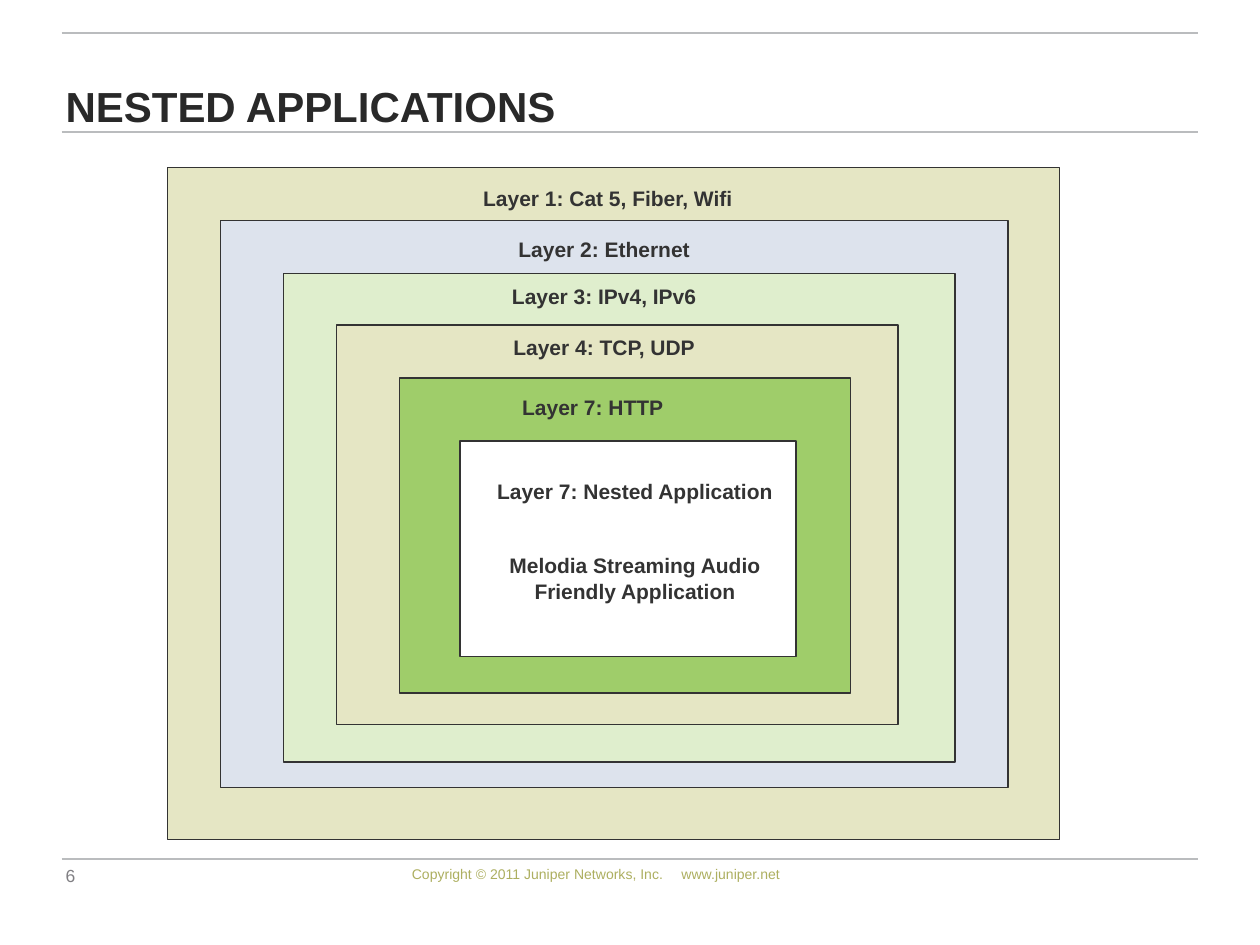
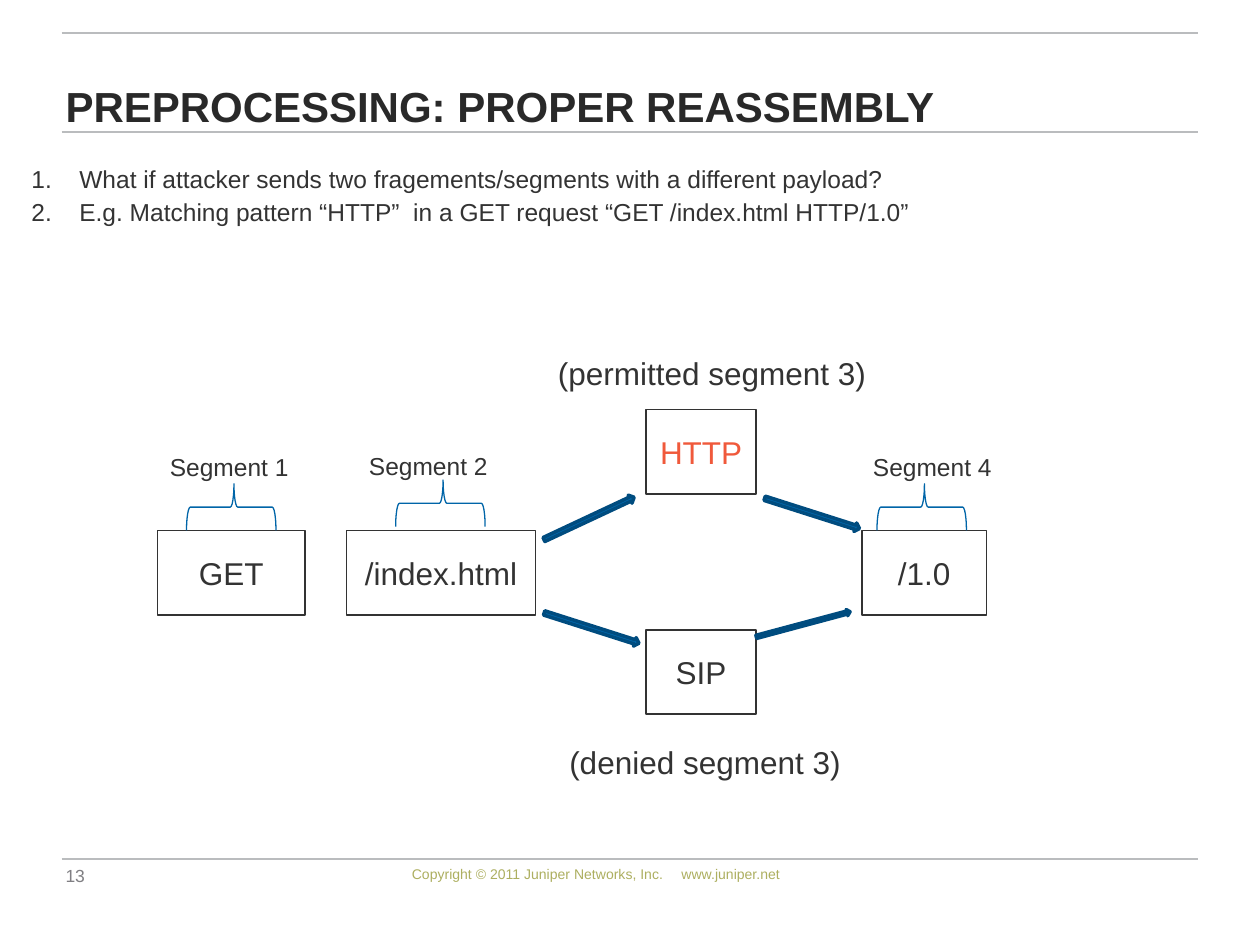
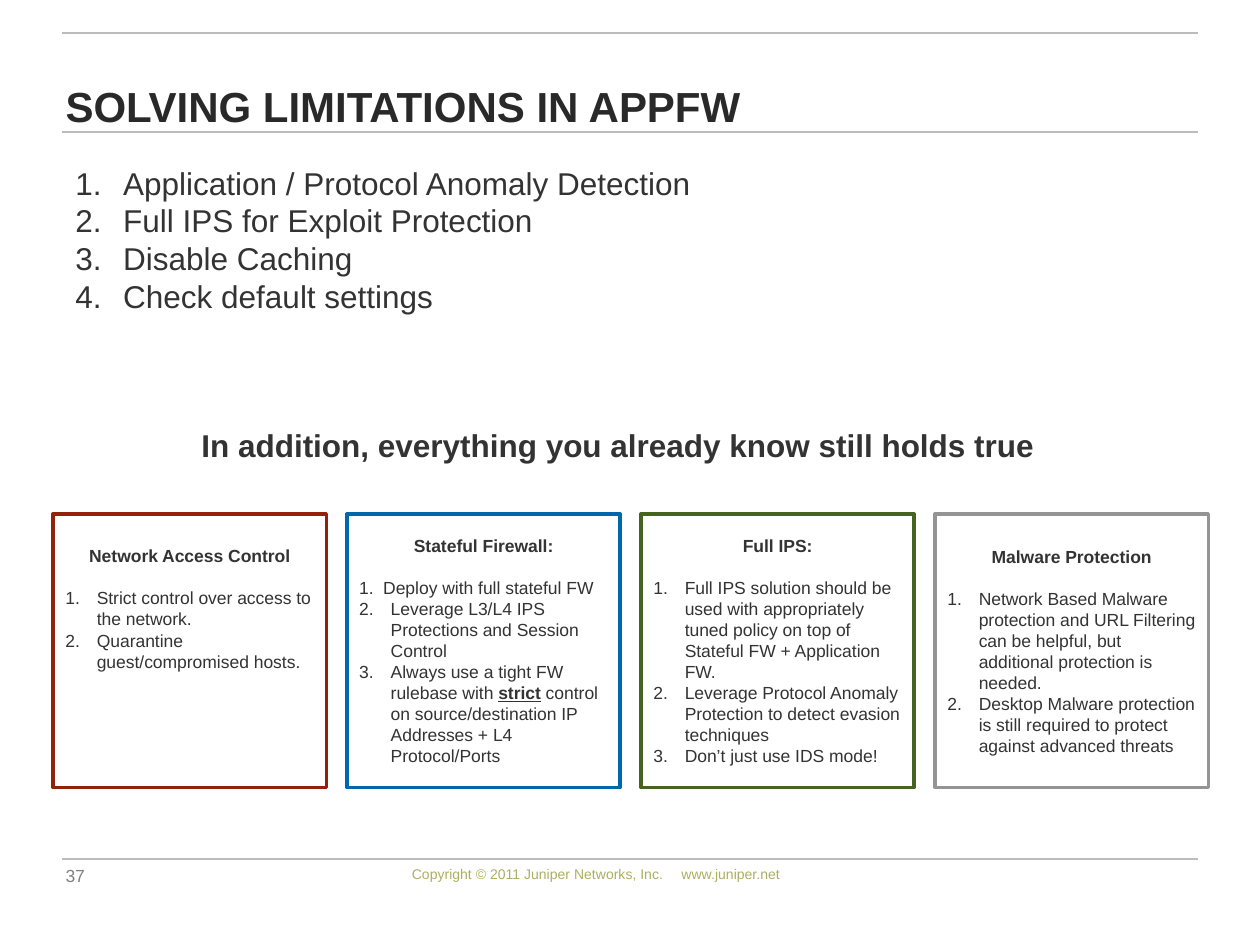
from lxml import etree
from pptx import Presentation
from pptx.dml.color import RGBColor
from pptx.enum.shapes import MSO_CONNECTOR, MSO_SHAPE
from pptx.enum.text import MSO_ANCHOR, PP_ALIGN
from pptx.oxml.ns import qn
from pptx.util import Inches, Pt

INK = RGBColor(0x33, 0x33, 0x33)
TITLE_INK = RGBColor(0x29, 0x29, 0x29)
RULE = RGBColor(0xBA, 0xBC, 0xBE)
PAGE_GREY = RGBColor(0x80, 0x7F, 0x83)
OLIVE = RGBColor(0xAD, 0xAF, 0x60)
WHITE = RGBColor(0xFF, 0xFF, 0xFF)
SAND = RGBColor(0xE5, 0xE6, 0xC4)
MIST = RGBColor(0xDD, 0xE3, 0xED)
MINT = RGBColor(0xDF, 0xEE, 0xCD)
GREEN = RGBColor(0x9F, 0xCD, 0x6A)
ORANGE = RGBColor(0xF0, 0x59, 0x3B)
BRACE_BLUE = RGBColor(0x00, 0x65, 0xA8)
BLUE = RGBColor(0x00, 0x67, 0xAC)
NAVY = RGBColor(0x00, 0x4C, 0x7F)
RED = RGBColor(0x93, 0x22, 0x0B)
FOREST = RGBColor(0x45, 0x64, 0x22)
GREY = RGBColor(0x94, 0x94, 0x94)

FONT = "Arial"
COPYRIGHT = "Copyright © 2011 Juniper Networks, Inc.\twww.juniper.net"
CENTER = {"alignment": PP_ALIGN.CENTER}
PADDING = (0.1, 0.05, 0.1, 0.05)
SIDES = ("margin_left", "margin_top", "margin_right", "margin_bottom")


def assign(target, values):
    """Set each named value on the target."""
    for name, value in values.items():
        setattr(target, name, value)


class Deck:
    """Holds the presentation, its style and the current slide."""

    def __init__(self):
        """Start an empty 10 by 7.5 inch presentation."""
        self.show = Presentation()
        assign(self.show, {"slide_width": Inches(10), "slide_height": Inches(7.5)})
        self.slide = None

    def start(self, title, number):
        """Add a slide with its rules, title and footer."""
        self.slide = self.show.slides.add_slide(self.show.slide_layouts[6])
        self.text((0.52, 6.81, 0.58, 0.22), [number], 10, PAGE_GREY,
                  anchor=MSO_ANCHOR.BOTTOM, padding=(0, 0, 0, 0))
        for height in (6.82, 1.05, 0.26):
            self.rule(height)
        footer = self.text((3.17, 6.82, 3.25, 0.24), [COPYRIGHT], 8, OLIVE)
        stops = etree.SubElement(footer.paragraphs[0]._p.get_or_add_pPr(), qn("a:tabLst"))
        etree.SubElement(stops, qn("a:tab"), pos=str(Inches(2.14)), algn="l")
        self.text((0.52, 0.28, 8.99, 0.81), [title], 24, TITLE_INK, bold=True,
                  layout={"line_spacing": 0.9, "space_after": Pt(5.3)},
                  anchor=MSO_ANCHOR.BOTTOM, padding=(0, 0.05, 0.1, 0.05))

    def rule(self, height):
        """Draw a grey line across the slide."""
        line = self.slide.shapes.add_connector(
            MSO_CONNECTOR.STRAIGHT, Inches(0.49), Inches(height), Inches(9.51), Inches(height))
        line.line.color.rgb = RULE
        line.line.width = Pt(1)
        etree.SubElement(line._element.spPr, qn("a:effectLst"))

    def shape(self, preset, at, fill, edge, weight=1, turn=0):
        """Draw a preset shape."""
        figure = self.slide.shapes.add_shape(preset, *map(Inches, at))
        figure.shadow.inherit = False
        figure.rotation = turn
        if fill is None:
            figure.fill.background()
        else:
            figure.fill.solid()
            figure.fill.fore_color.rgb = fill
        figure.line.color.rgb = edge
        figure.line.width = Pt(weight)
        return figure

    def text(self, at, paragraphs, size, color=INK, anchor=MSO_ANCHOR.TOP, padding=PADDING,
             **options):
        """Add a text box and fill it."""
        frame = self.slide.shapes.add_textbox(*map(Inches, at)).text_frame
        self.fit(frame, anchor, padding)
        self.add_text(frame, paragraphs, size, color, **options)
        return frame

    def box(self, at, paragraphs, size, color=INK, edge=INK, weight=1, padding=PADDING, **options):
        """Draw a white rectangle with text centred in its height."""
        frame = self.shape(MSO_SHAPE.RECTANGLE, at, WHITE, edge, weight).text_frame
        self.fit(frame, MSO_ANCHOR.MIDDLE, padding)
        self.add_text(frame, paragraphs, size, color, **options)
        return frame

    def fit(self, frame, anchor, padding):
        """Set wrapping, anchor and margins."""
        assign(frame, {"word_wrap": True, "vertical_anchor": anchor})
        assign(frame, dict(zip(SIDES, map(Inches, padding))))

    def add_text(self, frame, paragraphs, size, color=INK, bold=False, layout=None,
                 indents=None, after=False):
        """Add paragraphs, numbered when indents are given."""
        for index, content in enumerate(paragraphs):
            reuse = index == 0 and not after
            paragraph = frame.paragraphs[0] if reuse else frame.add_paragraph()
            if indents:
                self.number(paragraph, indents[min(index, len(indents) - 1)])
            assign(paragraph, layout or {"alignment": PP_ALIGN.LEFT})
            for words, accents in [(content, {})] if isinstance(content, str) else content:
                run = paragraph.add_run()
                run.text = words
                assign(run.font, {"name": FONT, "size": Pt(size), "bold": bold, **accents})
                run.font.color.rgb = color

    def number(self, paragraph, indent):
        """Give a paragraph an automatic number and hanging indent."""
        properties = paragraph._p.get_or_add_pPr()
        properties.set("marL", str(Inches(indent)))
        properties.set("indent", str(-Inches(indent)))
        etree.SubElement(properties, qn("a:buFont"), typeface=FONT)
        etree.SubElement(properties, qn("a:buAutoNum"), type="arabicPeriod")


def nested_applications(deck):
    """Build the slide of nested layers."""
    deck.start("NESTED APPLICATIONS", "6")
    layers = [
        ((1.33, 1.33, 7.08, 5.33), SAND, 0.5),
        ((1.75, 1.75, 6.25, 4.5), MIST, 1),
        ((2.25, 2.17, 5.33, 3.88), MINT, 1),
        ((2.67, 2.58, 4.46, 3.17), SAND, 1),
        ((3.17, 3, 3.58, 2.5), GREEN, 1),
        ((3.65, 3.5, 2.67, 1.71), WHITE, 1),
    ]
    for at, fill, weight in layers:
        deck.shape(MSO_SHAPE.RECTANGLE, at, fill, INK, weight)
    captions = [
        (3.73, 1.42, 2.19, "Layer 1: Cat 5, Fiber, Wifi"),
        (3.92, 1.83, 1.75, "Layer 2: Ethernet"),
        (3.92, 2.2, 1.75, "Layer 3: IPv4, IPv6"),
        (3.92, 2.61, 1.75, "Layer 4: TCP, UDP"),
        (3.83, 3.08, 1.75, "Layer 7: HTTP"),
    ]
    for left, top, width, caption in captions:
        deck.text((left, top, width, 0.3), [caption], 12, bold=True, layout=CENTER)
    nested = deck.text((3.83, 3.75, 2.42, 1.11),
                       ["Layer 7: Nested Application", "Melodia Streaming Audio",
                        "Friendly Application"], 12, bold=True, layout=CENTER)
    nested.paragraphs[0].space_after = Pt(28)


def proper_reassembly(deck):
    """Build the slide of the split request."""
    deck.start("PREPROCESSING: PROPER REASSEMBLY", "13")
    deck.text((0.25, 1.25, 9, 0.83),
              ["What if attacker sends two fragements/segments with a different payload?",
               "E.g. Matching pattern “HTTP”  in a GET request “GET /index.html HTTP/1.0”"],
              14, layout={"space_after": Pt(2)}, indents=[0.38], padding=(0, 0.05, 0.1, 0.05))
    payloads = [
        (1.25, 4.21, 1.17, "GET", INK),
        (5.13, 3.25, 0.87, "HTTP", ORANGE),
        (2.75, 4.21, 1.5, "/index.html", INK),
        (6.84, 4.21, 0.99, "/1.0", INK),
        (5.13, 5, 0.87, "SIP", INK),
    ]
    for left, top, width, payload, color in payloads:
        deck.box((left, top, width, 0.67), [payload], 18, color, layout=CENTER)
    segments = [
        (1.65, 3.67, 1.25, 3.54, "Segment 1"),
        (3.31, 3.64, 2.83, 3.53, "Segment 2"),
        (7.13, 3.67, 6.83, 3.54, "Segment 4"),
    ]
    for brace_left, brace_top, left, top, segment in segments:
        brace = deck.shape(MSO_SHAPE.LEFT_BRACE, (brace_left, brace_top, 0.37, 0.71),
                           None, BRACE_BLUE, 0.75, 90)
        brace.adjustments[0], brace.adjustments[1] = 0.08, 0.47
        deck.text((left, top, 1.33, 0.34), [segment], 14)
    deck.text((4.42, 5.85, 2.5, 0.4), ["(denied segment 3)"], 18)
    deck.text((4.33, 2.76, 2.75, 0.4), ["(permitted segment 3)"], 18)
    routes = [
        ((4.28, 4.08, 0.79, 0.07), 334.9),
        ((4.3, 4.95, 0.79, 0.07), 17.7),
        ((6.05, 4.04, 0.79, 0.07), 17.7),
        ((5.99, 4.93, 0.77, 0.05), 345),
    ]
    for at, turn in routes:
        deck.shape(MSO_SHAPE.RIGHT_ARROW, at, BLUE, NAVY, 2, turn)


def solving_limitations(deck):
    """Build the slide of remedies and the four defences."""
    deck.start("SOLVING LIMITATIONS IN APPFW", "37")
    deck.text((0.5, 1.25, 9, 3.43),
              ["Application / Protocol Anomaly Detection", "Full IPS for Exploit Protection",
               "Disable Caching", "Check default settings"], 18, indents=[0.38])
    defences = [
        ("Network Access Control", RED, [0.25], 0.72,
         ["Strict control over access to the network.",
          "Quarantine guest/compromised hosts."]),
        ("Stateful Firewall:", BLUE, [0.19, 0.25], 0.05,
         ["Deploy with full stateful FW",
          "Leverage L3/L4 IPS Protections and Session Control",
          [("Always use a tight FW rulebase with ", {}),
           ("strict", {"bold": True, "underline": True}),
           (" control on source/destination IP Addresses + L4 Protocol/Ports", {})]]),
        ("Full IPS:", FOREST, [0.25], 0.05,
         ["Full IPS solution should be used with appropriately tuned policy on top of "
          "Stateful FW + Application FW.",
          "Leverage Protocol Anomaly Protection to detect evasion techniques",
          "Don’t just use IDS mode!"]),
        ("Malware Protection", GREY, [0.25], 0.05,
         ["Network Based Malware protection and URL Filtering can be helpful, but "
          "additional protection is needed.",
          "Desktop Malware protection is still required to protect against advanced threats"]),
    ]
    for column, (heading, edge, indents, bottom, advice) in enumerate(defences):
        frame = deck.box((0.42 + column * 7 / 3, 4.08, 2.17, 2.17), [heading], 10,
                         edge=edge, weight=2, padding=(0.1, 0.05, 0.1, bottom), bold=True,
                         layout={**CENTER, "space_after": Pt(12)})
        deck.add_text(frame, advice, 10, indents=indents, after=True)
    deck.text((1.5, 3.33, 7.08, 0.4),
              ["In addition, everything you already know still holds true"], 18, bold=True)


def main():
    """Build and save the three slides."""
    deck = Deck()
    nested_applications(deck)
    proper_reassembly(deck)
    solving_limitations(deck)
    deck.show.save("out.pptx")


if __name__ == "__main__":
    main()
